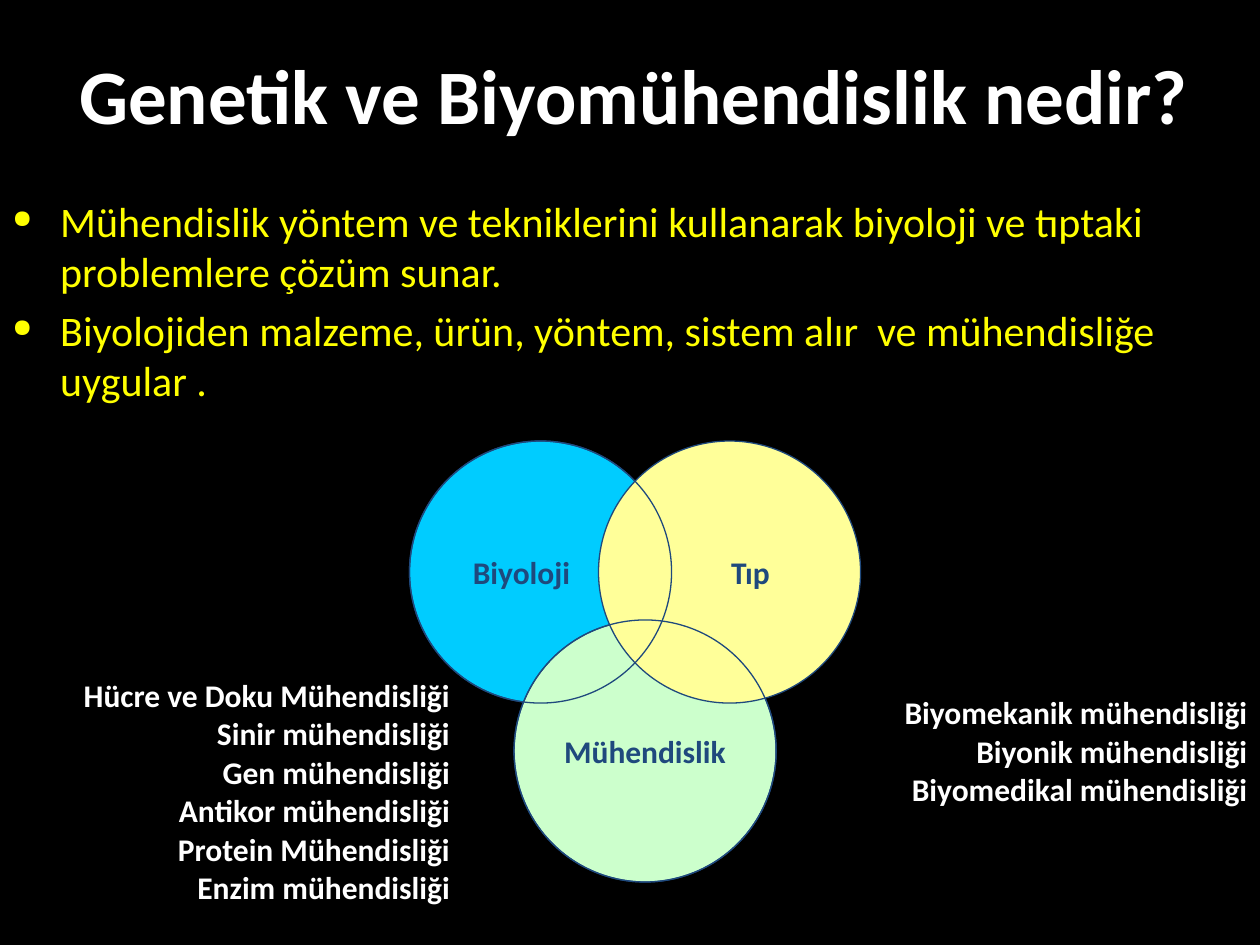
from lxml import etree
from pptx import Presentation
from pptx.dml.color import RGBColor
from pptx.enum.shapes import MSO_SHAPE
from pptx.enum.text import MSO_ANCHOR, PP_ALIGN
from pptx.oxml.ns import qn
from pptx.util import Inches, Pt

OVAL = MSO_SHAPE.OVAL
MIDDLE, TOP = MSO_ANCHOR.MIDDLE, MSO_ANCHOR.TOP
LEFT, CENTER, RIGHT = PP_ALIGN.LEFT, PP_ALIGN.CENTER, PP_ALIGN.RIGHT

FONT = "Calibri"
BLACK, WHITE, YELLOW, NAVY = "000000", "FFFFFF", "FFFF00", "1F497D"
DIAMETER = 2.08
INSET = 0.1

# Label, left, top, fill, extra left inset, extra right inset
CIRCLES = [
    ("Biyoloji", 3.25, 3.5, "00CCFF", 0, 0.3),
    ("Mühendislik", 4.08, 4.92, "CCFFCC", 0, 0),
    ("Tıp", 4.75, 3.5, "FFFF99", 0.33, 0),
]
STATEMENTS = [
    "Mühendislik yöntem ve tekniklerini kullanarak biyoloji ve tıptaki problemlere çözüm sunar.",
    "Biyolojiden malzeme, ürün, yöntem, sistem alır  ve mühendisliğe uygular .",
]
BIOLOGY_FIELDS = [
    "Hücre ve Doku Mühendisliği",
    "Sinir mühendisliği",
    "Gen mühendisliği",
    "Antikor mühendisliği",
    "Protein Mühendisliği",
    "Enzim mühendisliği",
]
MEDICINE_FIELDS = [
    "Biyomekanik mühendisliği",
    "Biyonik mühendisliği",
    "Biyomedikal mühendisliği",
]


def color(value):
    return RGBColor.from_string(value)


def add_run(paragraph, text, size, font_color, bold):
    run = paragraph.add_run()
    run.text = text
    run.font.name = FONT
    run.font.size = Pt(size)
    run.font.bold = bold
    run.font.color.rgb = color(font_color)


def add_text(slide, box, lines, size, font_color, align, bold=True, before=0, spacing=None):
    shape = slide.shapes.add_textbox(*(Inches(length) for length in box))
    frame = shape.text_frame
    frame.word_wrap = True
    frame.vertical_anchor = TOP
    for index, line in enumerate(lines):
        paragraph = frame.add_paragraph() if index else frame.paragraphs[0]
        paragraph.alignment = align
        paragraph.space_before = Pt(before)
        paragraph.line_spacing = spacing
        add_run(paragraph, line, size, font_color, bold)
    return frame


def add_bullet(paragraph, indent):
    properties = paragraph._p.get_or_add_pPr()
    properties.set("marL", str(Inches(indent)))
    properties.set("indent", str(-Inches(indent)))
    etree.SubElement(properties, qn("a:buSzPct")).set("val", "60000")
    etree.SubElement(properties, qn("a:buChar")).set("char", "●")


def add_circle(slide, left, top, fill=None):
    shape = slide.shapes.add_shape(
        OVAL, Inches(left), Inches(top), Inches(DIAMETER), Inches(DIAMETER))
    shape.shadow.inherit = False
    shape.line.color.rgb = color(NAVY)
    shape.line.width = Pt(0.75)
    if fill:
        shape.fill.solid()
        shape.fill.fore_color.rgb = color(fill)
    else:
        shape.fill.background()
    return shape


def add_label(shape, text, extra_left, extra_right):
    frame = shape.text_frame
    frame.word_wrap = False
    frame.vertical_anchor = MIDDLE
    frame.margin_left = Inches(INSET + extra_left)
    frame.margin_right = Inches(INSET + extra_right)
    paragraph = frame.paragraphs[0]
    paragraph.alignment = CENTER
    add_run(paragraph, text, 18, NAVY, True)


def add_venn(slide):
    for label, left, top, fill, extra_left, extra_right in CIRCLES:
        circle = add_circle(slide, left, top, fill)
        add_label(circle, label, extra_left, extra_right)
    # Outlines of the covered circles stay visible on top
    for _, left, top, *_ in CIRCLES[:2]:
        add_circle(slide, left, top)


def main():
    presentation = Presentation()
    presentation.slide_width = Inches(10)
    presentation.slide_height = Inches(7.5)
    slide = presentation.slides.add_slide(presentation.slide_layouts[6])
    slide.background.fill.solid()
    slide.background.fill.fore_color.rgb = color(BLACK)

    # Title
    add_text(slide, (0.31, 0.33, 9.45, 1.08), ["Genetik ve Biyomühendislik nedir?"],
             44, WHITE, CENTER)

    # Venn diagram and the fields beside it
    add_venn(slide)
    for box, fields in [((0.25, 5.42, 3.42, 1.95), BIOLOGY_FIELDS),
                        ((6.34, 5.56, 3.66, 0.95), MEDICINE_FIELDS)]:
        add_text(slide, box, fields, 18, WHITE, RIGHT, before=9, spacing=0.6)

    # Bulleted statements
    body = add_text(slide, (0, 1.5, 9.77, 1.7), STATEMENTS, 24, YELLOW, LEFT,
                    bold=False, before=4.8)
    for paragraph in body.paragraphs:
        add_bullet(paragraph, 0.38)

    presentation.save("out.pptx")


if __name__ == "__main__":
    main()
